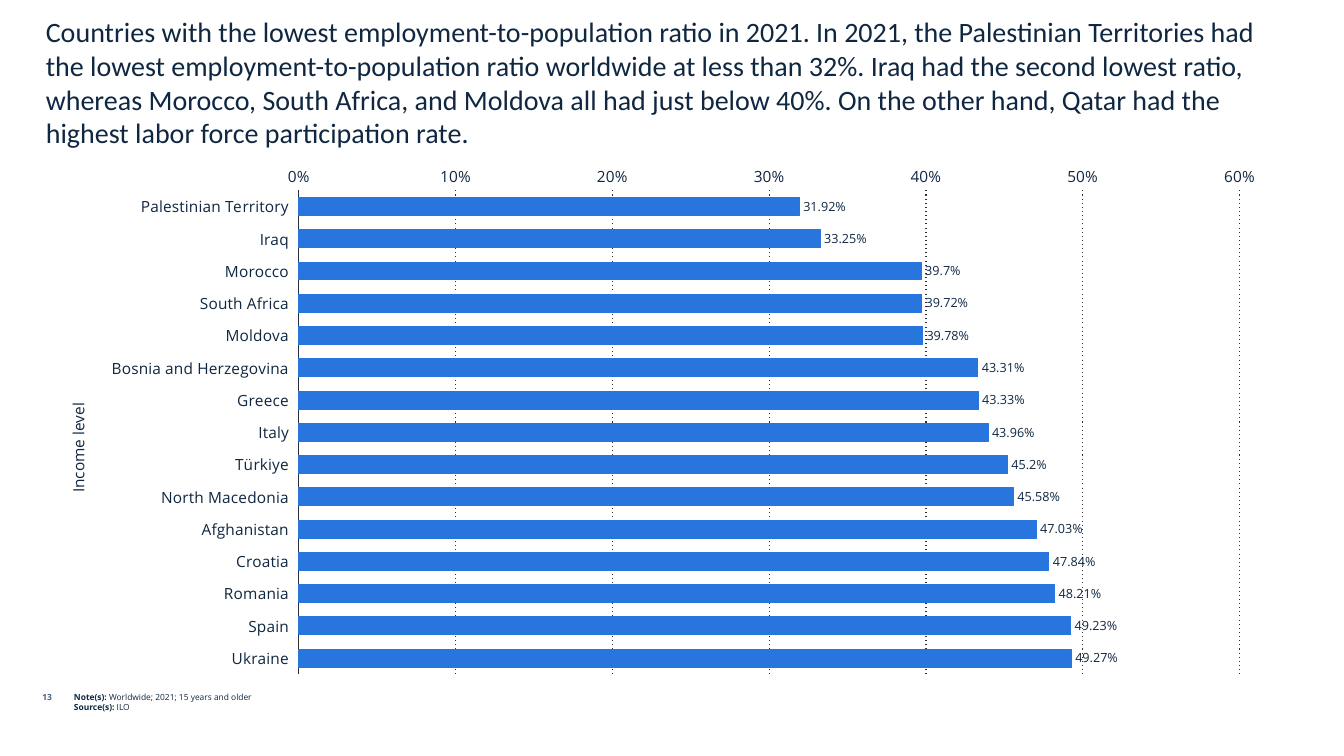
from lxml import etree
from pptx import Presentation
from pptx.chart.data import CategoryChartData
from pptx.dml.color import RGBColor
from pptx.enum.chart import (XL_CHART_TYPE, XL_LABEL_POSITION,
                             XL_TICK_LABEL_POSITION, XL_TICK_MARK)
from pptx.enum.dml import MSO_LINE
from pptx.enum.text import MSO_ANCHOR, MSO_AUTO_SIZE, PP_ALIGN
from pptx.oxml.ns import qn
from pptx.util import Pt

PX = 9525  # EMU in one px, at 96 px to the inch
NAVY = RGBColor(0x0F, 0x27, 0x41)
SLATE = RGBColor(0x45, 0x5F, 0x7C)
BLUE = RGBColor(0x28, 0x75, 0xDD)
CHARCOAL = RGBColor(0x2F, 0x2F, 0x2F)
BLACK = RGBColor(0, 0, 0)
TITLE_FONT = "Calibri"
BODY_FONT = "Open Sans"
LEFT, CENTER, RIGHT = PP_ALIGN.LEFT, PP_ALIGN.CENTER, PP_ALIGN.RIGHT
TITLE_ONLY = 5

TITLE = (
    "Countries with the lowest employment-to-population ratio in 2021. "
    "In 2021, the Palestinian Territories had the lowest "
    "employment-to-population ratio worldwide at less than 32%. Iraq had the "
    "second lowest ratio, whereas Morocco, South Africa, and Moldova all had "
    "just below 40%. On the other hand, Qatar had the highest labor force "
    "participation rate."
)
RATIOS = {
    "Palestinian Territory": 0.3192,
    "Iraq": 0.3325,
    "Morocco": 0.397,
    "South Africa": 0.3972,
    "Moldova": 0.3978,
    "Bosnia and Herzegovina": 0.4331,
    "Greece": 0.4333,
    "Italy": 0.4396,
    "Türkiye": 0.452,
    "North Macedonia": 0.4558,
    "Afghanistan": 0.4703,
    "Croatia": 0.4784,
    "Romania": 0.4821,
    "Spain": 0.4923,
    "Ukraine": 0.4927,
}
FOOTNOTES = [
    ("Note(s): ", "Worldwide; 2021; 15 years and older"),
    ("Source(s): ", "ILO"),
]
PLOT_AREA = {"x": 0.177, "y": 0.068, "w": 0.79, "h": 0.911}


def to_emu(*lengths):
    return [length * PX for length in lengths]


def set_font(font, size, color=NAVY, name=BODY_FONT, bold=False):
    font.name = name
    font.size = Pt(size)
    font.bold = bold
    font.color.rgb = color


def set_line(line, color):
    line.color.rgb = color
    line.width = Pt(0.75)


def add_text(page, bounds, paragraphs, size, color=NAVY, align=LEFT, bold=False):
    """Add a text box; each paragraph is a tuple of spans."""
    box = page.shapes.add_textbox(*to_emu(*bounds))
    frame = box.text_frame
    frame.word_wrap = True
    for index, spans in enumerate(paragraphs):
        para = frame.paragraphs[0] if index == 0 else frame.add_paragraph()
        para.alignment = align
        set_font(para.font, size, color, bold=bold)
        for text in spans:
            para.add_run().text = text
    return box


def fill_title(page, bounds):
    title = page.shapes.title
    title.left, title.top, title.width, title.height = to_emu(*bounds)
    frame = title.text_frame
    frame.text = TITLE
    frame.word_wrap = True
    frame.auto_size = MSO_AUTO_SIZE.NONE
    frame.vertical_anchor = MSO_ANCHOR.BOTTOM
    para = frame.paragraphs[0]
    para.alignment = LEFT
    set_font(para.font, 20, name=TITLE_FONT)


def place_plot_area(chart):
    """Fix the inner plot area as fractions of the chart."""
    plot_area = chart._chartSpace.chart.plotArea
    for layout in plot_area.findall(qn("c:layout")):
        plot_area.remove(layout)
    layout = etree.Element(qn("c:layout"))
    plot_area.insert(0, layout)
    manual = etree.SubElement(layout, qn("c:manualLayout"))
    settings = {"layoutTarget": "inner", "xMode": "edge", "yMode": "edge"}
    for tag, value in (settings | PLOT_AREA).items():
        etree.SubElement(manual, qn("c:" + tag)).set("val", str(value))


def format_axes(chart):
    countries, percents = chart.category_axis, chart.value_axis
    for axis in (countries, percents):
        axis.major_tick_mark = axis.minor_tick_mark = XL_TICK_MARK.NONE
        set_font(axis.tick_labels.font, 11)

    countries.reverse_order = True
    countries.has_major_gridlines = False
    countries.tick_label_position = XL_TICK_LABEL_POSITION.LOW
    set_line(countries.format.line, CHARCOAL)

    percents.minimum_scale, percents.maximum_scale = 0, 0.6
    percents.major_unit = 0.1
    percents.tick_labels.number_format = "#,##0%"
    percents.tick_labels.number_format_is_linked = False
    percents.format.line.fill.background()
    percents.has_major_gridlines = True
    grid_line = percents.major_gridlines.format.line
    set_line(grid_line, CHARCOAL)
    grid_line.dash_style = MSO_LINE.ROUND_DOT
    for dash in chart._chartSpace.iter(qn("a:prstDash")):
        dash.set("val", "dot")


def add_ratio_chart(page, bounds):
    data = CategoryChartData(number_format="0.##%")
    data.categories = list(RATIOS)
    data.add_series("Series 1", list(RATIOS.values()))
    chart = page.shapes.add_chart(
        XL_CHART_TYPE.BAR_CLUSTERED, *to_emu(*bounds), data).chart
    chart.has_title = False
    chart.has_legend = False
    set_font(chart.font, 18, BLACK, TITLE_FONT)
    place_plot_area(chart)
    format_axes(chart)

    # Bars and their labels
    plot = chart.plots[0]
    plot.vary_by_categories = False
    plot.gap_width = 80
    plot.overlap = -30
    bars = plot.series[0]
    bars.format.fill.solid()
    bars.format.fill.fore_color.rgb = BLUE
    set_line(bars.format.line, BLUE)
    labels = bars.data_labels
    labels.show_value = True
    labels.number_format = "0.##%"
    labels.number_format_is_linked = False
    labels.position = XL_LABEL_POSITION.OUTSIDE_END
    set_font(labels.font, 9)


def main():
    deck = Presentation()
    deck.slide_width, deck.slide_height = to_emu(1280, 720)
    page = deck.slides.add_slide(deck.slide_layouts[TITLE_ONLY])

    # Footnotes with bold lead-ins
    notes = add_text(page, (61, 654, 1005, 56), FOOTNOTES, 6)
    for para in notes.text_frame.paragraphs:
        para.runs[0].font.bold = True

    # Chart and its upright axis name
    add_ratio_chart(page, (84, 147, 1134, 506))
    axis_name = add_text(page, (61, 354, 23, 145), [("Income level",)], 11,
                         align=CENTER)
    axis_name.text_frame._txBody.bodyPr.set("vert", "vert270")

    # Page number and title
    add_text(page, (-10, 654, 69, 29), [("13",)], 6, SLATE, RIGHT, bold=True)
    fill_title(page, (34, 44, 1194, 103))

    deck.save("out.pptx")


if __name__ == "__main__":
    main()
